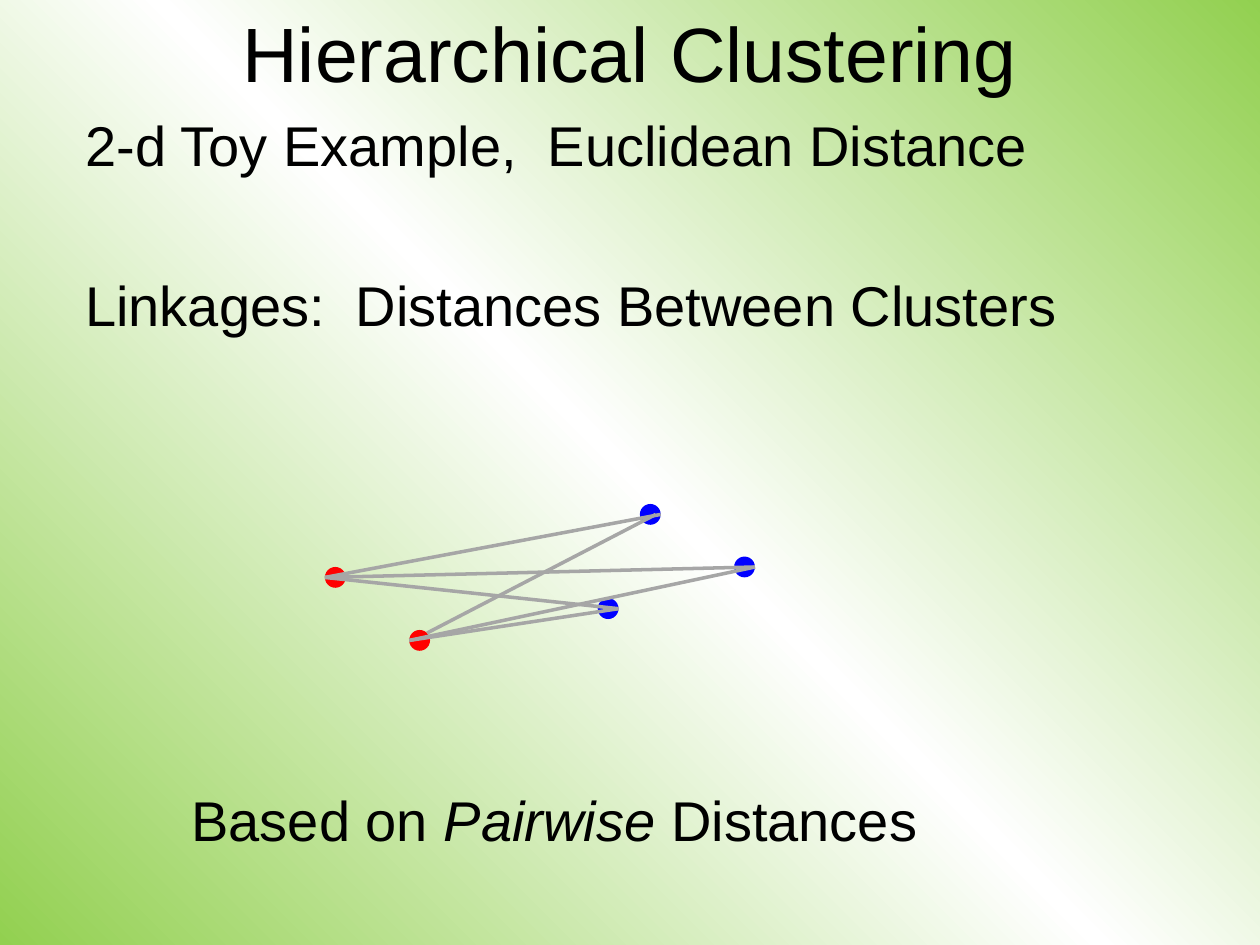
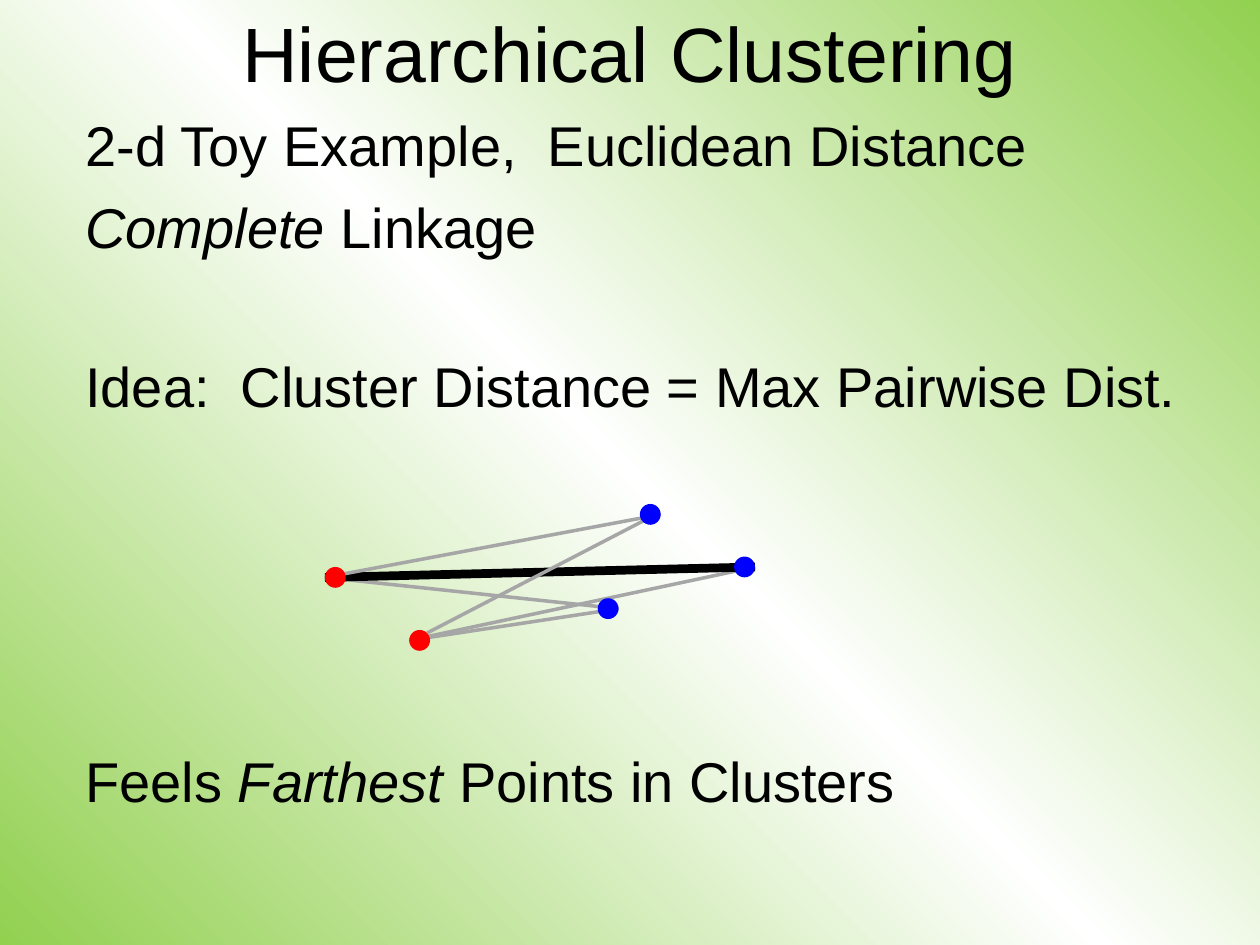
from copy import deepcopy

from lxml import etree
from pptx import Presentation
from pptx.dml.color import RGBColor
from pptx.enum import shapes, text
from pptx.oxml import ns
from pptx.util import Cm, Pt

GREEN = RGBColor(0x92, 0xD0, 0x50)
WHITE = RGBColor(0xFF, 0xFF, 0xFF)
BLACK = RGBColor(0x00, 0x00, 0x00)
RED = RGBColor(0xFF, 0x00, 0x00)
BLUE = RGBColor(0x00, 0x00, 0xFF)
GREY = RGBColor(0xA6, 0xA6, 0xA6)

FONT = "Arial"
TITLE_SIZE, BODY_SIZE = 44, 32
LINE_PITCH, LINE_GAP = 44.8, 8

TITLE_BOX = (1.9, 0.2, 21.6, 1.7)
BODY_BOX = (1.47, 2.11, 23.5, 15.88)
CAPTION_BOX = (3.61, 15.72, 15.27, 1.63)
CLUSTER_ORIGIN = (6.55, 10.16)

DOT = 0.42
RED_DOTS = [(0, 1.27), (1.7, 2.54)]
BLUE_DOTS = [(6.35, 0), (5.5, 1.9), (8.25, 1.06)]
LINKS = [(1, 1), (0, 1), (1, 2), (0, 2), (0, 0), (1, 0)]
OUTER_ANCHORS = ((0, DOT / 2), (DOT, DOT / 2))
STEEP_ANCHORS = {(1, 0): ((0.36, 0.06), (0.32, DOT / 2))}

HEADING = "Hierarchical Clustering"
TOPIC = (0, "2-d Toy Example,  Euclidean Distance")


def paint_background(master):
    """Give every slide the diagonal green and white gradient."""
    fill = master.background.fill
    fill.gradient()
    fill.gradient_angle = 225
    stop_list = master.element.find(".//" + ns.qn("a:gsLst"))
    stop_list.append(deepcopy(stop_list[0]))
    for stop, position, color in zip(fill.gradient_stops, (0, 0.5, 1), (GREEN, WHITE, GREEN)):
        stop.position = position
        stop.color.rgb = color


def add_text(page, box, lines, size=BODY_SIZE, wrap=True,
             anchor=text.MSO_ANCHOR.TOP, align=text.PP_ALIGN.LEFT):
    """Write (skipped lines, *spans) paragraphs in a box, with every second span italic."""
    frame = page.shapes.add_textbox(*map(Cm, box)).text_frame
    frame.word_wrap = wrap
    frame.vertical_anchor = anchor
    for index, (skipped, *spans) in enumerate(lines):
        para = frame.add_paragraph() if index else frame.paragraphs[0]
        para.alignment = align
        para.space_before = Pt(LINE_GAP + skipped * LINE_PITCH if index else 0)
        for number, words in enumerate(spans):
            span = para.add_run()
            span.text = words
            look = {"name": FONT, "size": Pt(size), "italic": number % 2 == 1}
            for name, value in look.items():
                setattr(span.font, name, value)
            span.font.color.rgb = BLACK


def add_dots(page, origin):
    """Draw the red and blue clusters from the given origin."""
    for color, dots in ((RED, RED_DOTS), (BLUE, BLUE_DOTS)):
        for x, y in dots:
            dot = page.shapes.add_shape(
                shapes.MSO_SHAPE.OVAL, Cm(origin[0] + x), Cm(origin[1] + y), Cm(DOT), Cm(DOT))
            dot.shadow.inherit = False
            dot.fill.solid()
            dot.fill.fore_color.rgb = color
            dot.line.fill.background()


def add_links(page, origin, strongest=None):
    """Join each red dot to each blue dot, with the strongest link in black."""
    for link in LINKS:
        ends = (RED_DOTS[link[0]], BLUE_DOTS[link[1]])
        anchors = STEEP_ANCHORS.get(link, OUTER_ANCHORS)
        points = [Cm(start + dot + shift)
                  for end, anchor in zip(ends, anchors)
                  for start, dot, shift in zip(origin, end, anchor)]
        line = page.shapes.add_connector(shapes.MSO_CONNECTOR.STRAIGHT, *points)
        line.line.color.rgb = BLACK if link == strongest else GREY
        line.line.width = Pt(5 if link == strongest else 2)
        etree.SubElement(line.element.spPr, ns.qn("a:effectLst"))


def add_page(deck, lines):
    """Start a slide with the shared title and its body lines."""
    page = deck.slides.add_slide(deck.slide_layouts[6])
    add_text(page, TITLE_BOX, [(0, HEADING)], TITLE_SIZE,
             anchor=text.MSO_ANCHOR.MIDDLE, align=text.PP_ALIGN.CENTER)
    add_text(page, BODY_BOX, [TOPIC, *lines])
    return page


def add_linkages_page(deck):
    """Show all pairwise distances between the clusters."""
    page = add_page(deck, [(1, "Linkages:  Distances Between Clusters")])
    add_dots(page, CLUSTER_ORIGIN)
    add_links(page, CLUSTER_ORIGIN)
    add_text(page, CAPTION_BOX, [(0, "Based on ", "Pairwise", " Distances")], wrap=False)


def add_complete_page(deck):
    """Show complete linkage with the farthest pair marked."""
    page = add_page(deck, [
        (0, "", "Complete", " Linkage"),
        (1, "Idea:  Cluster Distance = Max Pairwise Dist."),
        (4, "Feels ", "Farthest", " Points in Clusters"),
    ])
    add_links(page, CLUSTER_ORIGIN, strongest=(0, 2))
    add_dots(page, CLUSTER_ORIGIN)


def main():
    """Build and save the deck."""
    deck = Presentation()
    deck.slide_width, deck.slide_height = Cm(25.4), Cm(19.05)
    paint_background(deck.slide_master)
    add_linkages_page(deck)
    add_complete_page(deck)
    deck.save("out.pptx")


if __name__ == "__main__":
    main()
